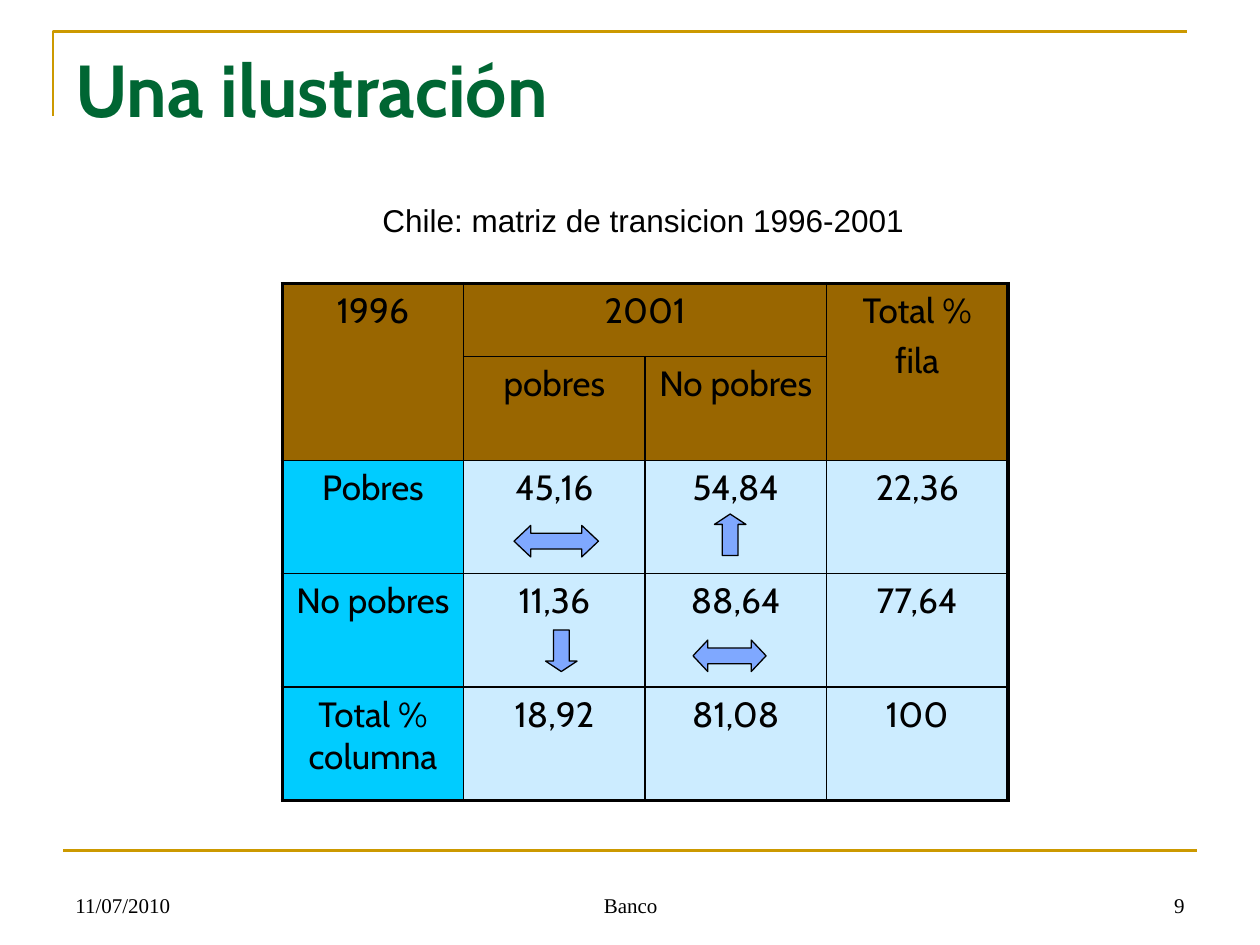
from dataclasses import dataclass

from lxml.etree import SubElement
from pptx import Presentation
from pptx.dml.color import RGBColor
from pptx.enum.shapes import MSO_CONNECTOR, MSO_SHAPE
from pptx.enum.text import MSO_ANCHOR, PP_ALIGN
from pptx.oxml import parse_xml
from pptx.oxml.ns import nsdecls, qn
from pptx.util import Inches, Pt


@dataclass(frozen=True)
class Theme:
    black: str = "000000"
    gold: str = "CC9900"
    green: str = "006633"
    header: str = "996600"
    label: str = "00CCFF"
    value: str = "CCECFF"
    arrow: str = "3366FF"
    heading_font: str = "Cabin"
    caption_font: str = "Arial"
    footer_font: str = "Times New Roman"
    title_size: int = 42
    table_size: int = 20
    caption_size: int = 18
    footer_size: int = 12
    rule_width: float = 1.5
    outer_border: float = 2.25
    inner_border: float = 1
    arrow_line: float = 0.75


class SlideBuilder:
    """Draws styled elements on the current slide."""

    def __init__(self, slide, theme):
        self.slide = slide
        self.theme = theme

    def style_paragraph(self, paragraph, font, size, color, align, before=0, bold=False):
        paragraph.alignment = align
        paragraph.space_before = Pt(before)
        paragraph.font.name = font
        paragraph.font.size = Pt(size)
        paragraph.font.bold = bold
        paragraph.font.color.rgb = RGBColor.from_string(color)

    def style_line(self, line, color, width):
        line.color.rgb = RGBColor.from_string(color)
        line.width = Pt(width)

    def text(self, text, box, font, size, align=PP_ALIGN.LEFT, color=None,
             anchor=MSO_ANCHOR.TOP, before=0, bold=False):
        frame = self.slide.shapes.add_textbox(*map(Inches, box)).text_frame
        frame.word_wrap = True
        frame.vertical_anchor = anchor
        frame.text = text
        self.style_paragraph(frame.paragraphs[0], font, size, color or self.theme.black,
                             align, before, bold)

    def corner(self, points):
        start, *rest = [(Inches(x), Inches(y)) for x, y in points]
        builder = self.slide.shapes.build_freeform(*start)
        builder.add_line_segments(rest, close=False)
        shape = builder.convert_to_shape()
        shape.shadow.inherit = False
        shape.fill.background()
        self.style_line(shape.line, self.theme.gold, self.theme.rule_width)

    def rule(self, left, right, top):
        connector = self.slide.shapes.add_connector(
            MSO_CONNECTOR.STRAIGHT, *map(Inches, (left, top, right, top)))
        SubElement(connector._element.spPr, qn("a:effectLst"))
        self.style_line(connector.line, self.theme.gold, self.theme.rule_width)

    def arrow(self, kind, box, head):
        shape = self.slide.shapes.add_shape(kind, *map(Inches, box))
        shape.adjustments[0] = 0.5
        shape.adjustments[1] = head
        shape.shadow.inherit = False
        shape.fill.solid()
        shape.fill.fore_color.rgb = RGBColor.from_string(self.theme.arrow)
        color = shape._element.spPr.find(qn("a:solidFill"))[0]
        SubElement(color, qn("a:alpha"), val="50000")
        self.style_line(shape.line, self.theme.black, self.theme.arrow_line)

    def border(self, cell, outer_sides):
        properties = cell._tc.get_or_add_tcPr()
        for index, (side, outer) in enumerate(zip("LRTB", outer_sides)):
            width = Pt(self.theme.outer_border if outer else self.theme.inner_border)
            properties.insert(index, parse_xml(
                f'<a:ln{side} {nsdecls("a")} w="{width}"><a:solidFill>'
                f'<a:srgbClr val="{self.theme.black}"/></a:solidFill></a:ln{side}>'))

    def table(self, rows, merges, left, top, column_width, heights, header_rows):
        columns = len(rows[0])
        table = self.slide.shapes.add_table(
            len(rows), columns, Inches(left), Inches(top),
            Inches(column_width * columns), Inches(sum(heights))).table
        table.first_row = table.horz_banding = False
        for column in table.columns:
            column.width = Inches(column_width)
        for r, (values, height) in enumerate(zip(rows, heights)):
            table.rows[r].height = Inches(height)
            for c, value in enumerate(values):
                cell = table.cell(r, c)
                if r < header_rows:
                    color = self.theme.header
                else:
                    color = self.theme.value if c else self.theme.label
                cell.text = value
                cell.fill.solid()
                cell.fill.fore_color.rgb = RGBColor.from_string(color)
                self.border(cell, (c == 0, c == columns - 1, r == 0, r == len(rows) - 1))
                for paragraph in cell.text_frame.paragraphs:
                    self.style_paragraph(paragraph, self.theme.heading_font,
                                         self.theme.table_size, self.theme.black,
                                         PP_ALIGN.CENTER, before=4)
        for first, last in merges:
            table.cell(*first).merge(table.cell(*last))


def main():
    presentation = Presentation()
    presentation.slide_width = Inches(10)
    presentation.slide_height = Inches(7.5)
    theme = Theme()
    builder = SlideBuilder(presentation.slides.add_slide(presentation.slide_layouts[6]), theme)

    builder.corner([(0.42, 0.92), (0.42, 0.25), (9.42, 0.25)])
    builder.rule(0.5, 9.5, 6.75)
    for text, left, width, align in (
        ("11/07/2010", 0.5, 2.33, PP_ALIGN.LEFT),
        ("Banco", 3.42, 3.17, PP_ALIGN.CENTER),
        ("9", 7.17, 2.33, PP_ALIGN.RIGHT),
    ):
        builder.text(text, (left, 6.83, width, 0.5), theme.footer_font, theme.footer_size,
                     align, anchor=MSO_ANCHOR.BOTTOM)
    builder.text("Una ilustración", (0.5, 0.3, 9, 1.25), theme.heading_font,
                 theme.title_size, color=theme.green, bold=True)

    rows = [
        ("1996", "2001", "", "Total %\nfila"),
        ("", "pobres", "No pobres", ""),
        ("Pobres", "45,16", "54,84", "22,36"),
        ("No pobres", "11,36", "88,64", "77,64"),
        ("Total % columna", "18,92", "81,08", "100"),
    ]
    merges = [((0, 0), (1, 0)), ((0, 1), (0, 2)), ((0, 3), (1, 3))]
    builder.table(rows, merges, 2.24, 2.25, 1.44, [0.58] * 2 + [0.9] * 3, header_rows=2)

    for kind, box, head in (
        (MSO_SHAPE.LEFT_RIGHT_ARROW, (4.08, 4.17, 0.67, 0.25), 0.53),
        (MSO_SHAPE.UP_ARROW, (5.67, 4.08, 0.25, 0.33), 0.33),
        (MSO_SHAPE.DOWN_ARROW, (4.33, 5, 0.25, 0.33), 0.33),
        (MSO_SHAPE.LEFT_RIGHT_ARROW, (5.5, 5.08, 0.58, 0.25), 0.47),
    ):
        builder.arrow(kind, box, head)
    builder.text("Chile: matriz de transicion 1996-2001", (2.48, 1.55, 5.25, 0.4),
                 theme.caption_font, theme.caption_size, PP_ALIGN.CENTER, before=9)

    presentation.save("out.pptx")


if __name__ == "__main__":
    main()
